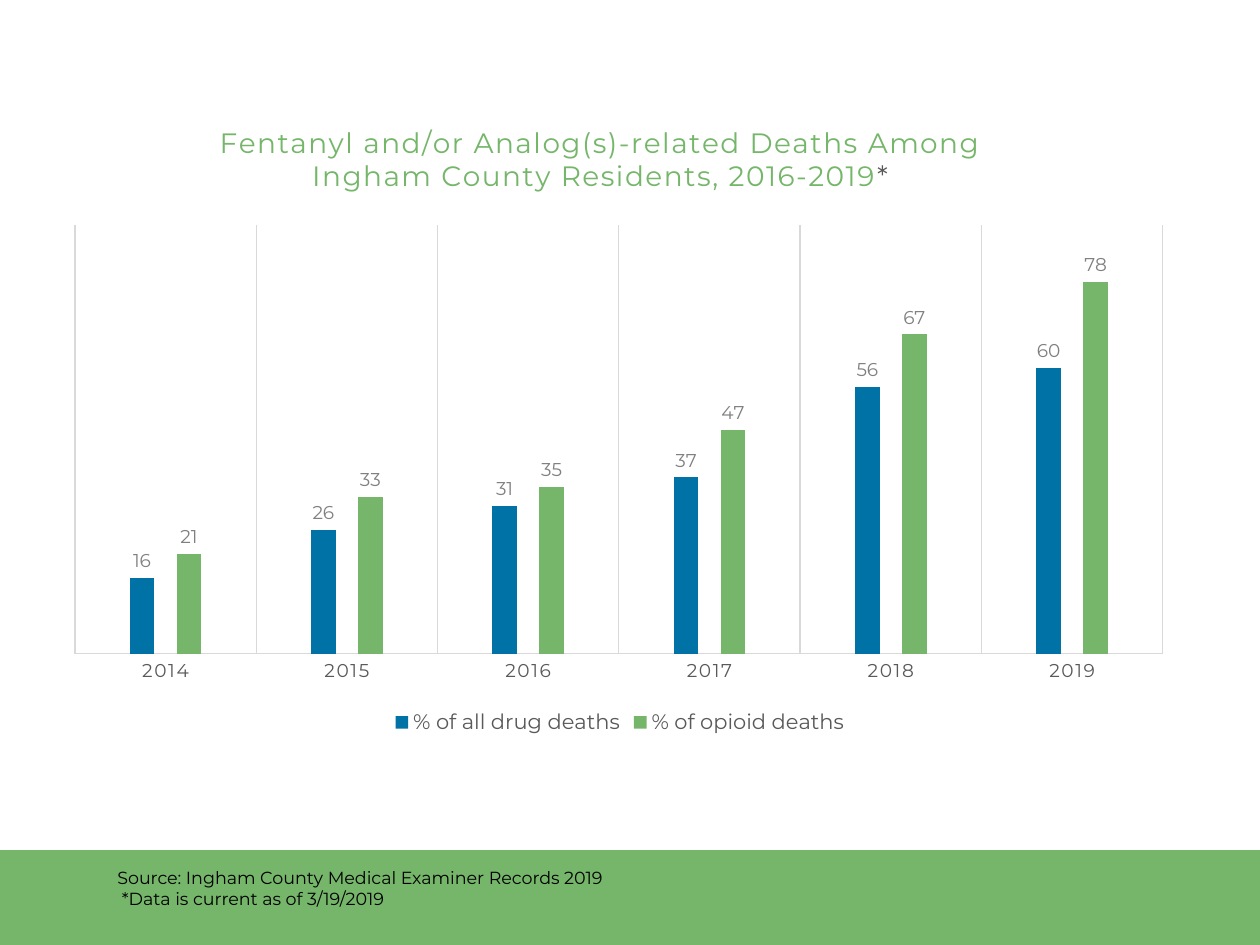
import pptx
import pptx.util
import pptx.chart.data
import pptx.dml.color
import pptx.enum.chart
import pptx.enum.shapes
import pptx.oxml
import pptx.oxml.ns

RGB = pptx.dml.color.RGBColor
GREEN = RGB(0x75, 0xB6, 0x6A)
BLUE = RGB(0x00, 0x72, 0xA6)
DARK = RGB(0x59, 0x59, 0x59)
GREY = RGB(0x80, 0x80, 0x80)
LIGHT = RGB(0xD9, 0xD9, 0xD9)
BLACK = RGB(0x00, 0x00, 0x00)
FONT = "Montserrat"

# Content
TITLE = [
    [("Fentanyl and/or Analog(s)-related Deaths Among", GREEN)],
    [("Ingham County Residents, 2016-2019", GREEN), ("*", DARK)],
]
YEARS = ["2014", "2015", "2016", "2017", "2018", "2019"]
SERIES = [
    ("% of all drug deaths", [16, 26, 31, 37, 56, 60], BLUE),
    ("% of opioid deaths", [21, 33, 35, 47, 67, 78], GREEN),
]
NOTES = [
    "Source: Ingham County Medical Examiner Records 2019",
    " *Data is current as of 3/19/2019",
]

# Places in px (126 to the inch): left, top, width, height
SLIDE = (1260, 945)
BAND = (0, 850, 1260, 95)
CHART = (53, 116, 1134, 624)
PLOT = (75, 225, 1088, 429)
TITLE_AT = (216, 121)
NOTE = (105, 861, 1018, 84)


def px(n):
    return pptx.util.Emu(round(n * 914400 / 126))


def style(font, size, color, spacing=None):
    font.size, font.name, font.bold = pptx.util.Pt(size), FONT, False
    font.color.rgb = color
    if spacing:
        font._rPr.set("spc", str(spacing))


def line(fmt):
    fmt.line.color.rgb = LIGHT
    fmt.line.width = pptx.util.Pt(0.75)


def manual_layout(box, inner=False):
    """Layout element placing a px box (or just its corner) within the chart."""
    x, y, w, h = CHART
    parts = [("layoutTarget", "inner")] if inner else []
    parts += [("xMode", "edge"), ("yMode", "edge")]
    fractions = ((box[0] - x) / w, (box[1] - y) / h, *(n / d for n, d in zip(box[2:], (w, h))))
    parts += [(tag, round(f, 4)) for tag, f in zip("xywh", fractions)]
    body = "".join(f'<c:{tag} val="{val}"/>' for tag, val in parts)
    return pptx.oxml.parse_xml(
        f'<c:layout {pptx.oxml.ns.nsdecls("c")}><c:manualLayout>{body}</c:manualLayout></c:layout>')


def place(parent, layout, index):
    for old in parent.findall(pptx.oxml.ns.qn("c:layout")):
        parent.remove(old)
    parent.insert(index, layout)


prs = pptx.Presentation()
prs.slide_width, prs.slide_height = map(px, SLIDE)
s = prs.slides.add_slide(prs.slide_layouts[6])

# Footer band
sp = s.shapes.add_shape(pptx.enum.shapes.MSO_SHAPE.RECTANGLE, *map(px, BAND))
sp.shadow.inherit = False
sp.fill.solid()
sp.fill.fore_color.rgb = GREEN
sp.line.fill.background()

# Chart
data = pptx.chart.data.CategoryChartData()
data.categories = YEARS
for name, values, _ in SERIES:
    data.add_series(name, values)
chart = s.shapes.add_chart(
    pptx.enum.chart.XL_CHART_TYPE.COLUMN_CLUSTERED, *map(px, CHART), data).chart
style(chart.font, 10, BLACK)

# Chart title
tf = chart.chart_title.text_frame
for i, runs in enumerate(TITLE):
    p = tf.add_paragraph() if i else tf.paragraphs[0]
    for text, color in runs:
        r = p.add_run()
        r.text = text
        style(r.font, 16, color, 100)
chart.chart_title.include_in_layout = False
place(chart.chart_title._element, manual_layout(TITLE_AT), 1)

# Columns and their labels
plot = chart.plots[0]
plot.gap_width, plot.overlap, plot.vary_by_categories = 444, -90, False
for series, (_, _, color) in zip(plot.series, SERIES):
    series.format.fill.solid()
    series.format.fill.fore_color.rgb = color
    labels = series.data_labels
    labels.show_value = True
    labels.position = pptx.enum.chart.XL_LABEL_POSITION.OUTSIDE_END
    style(labels.font, 10.6, GREY)
place(chart._chartSpace.chart.plotArea, manual_layout(PLOT, inner=True), 0)

# Axes
years, values = chart.category_axis, chart.value_axis
years.major_tick_mark = pptx.enum.chart.XL_TICK_MARK.NONE
years.has_major_gridlines = True
line(years.major_gridlines.format)
line(years.format)
style(years.tick_labels.font, 10.6, DARK, 100)
values.minimum_scale, values.maximum_scale = 0, 90
values.has_major_gridlines = False
values.visible = False

# Legend
chart.has_legend = True
chart.legend.position = pptx.enum.chart.XL_LEGEND_POSITION.BOTTOM
chart.legend.include_in_layout = False
style(chart.legend.font, 12, DARK)

# Source note
tf = s.shapes.add_textbox(*map(px, NOTE)).text_frame
tf.word_wrap = True
for i, text in enumerate(NOTES):
    p = tf.add_paragraph() if i else tf.paragraphs[0]
    r = p.add_run()
    r.text = text
    style(r.font, 10, BLACK)

prs.save("out.pptx")
